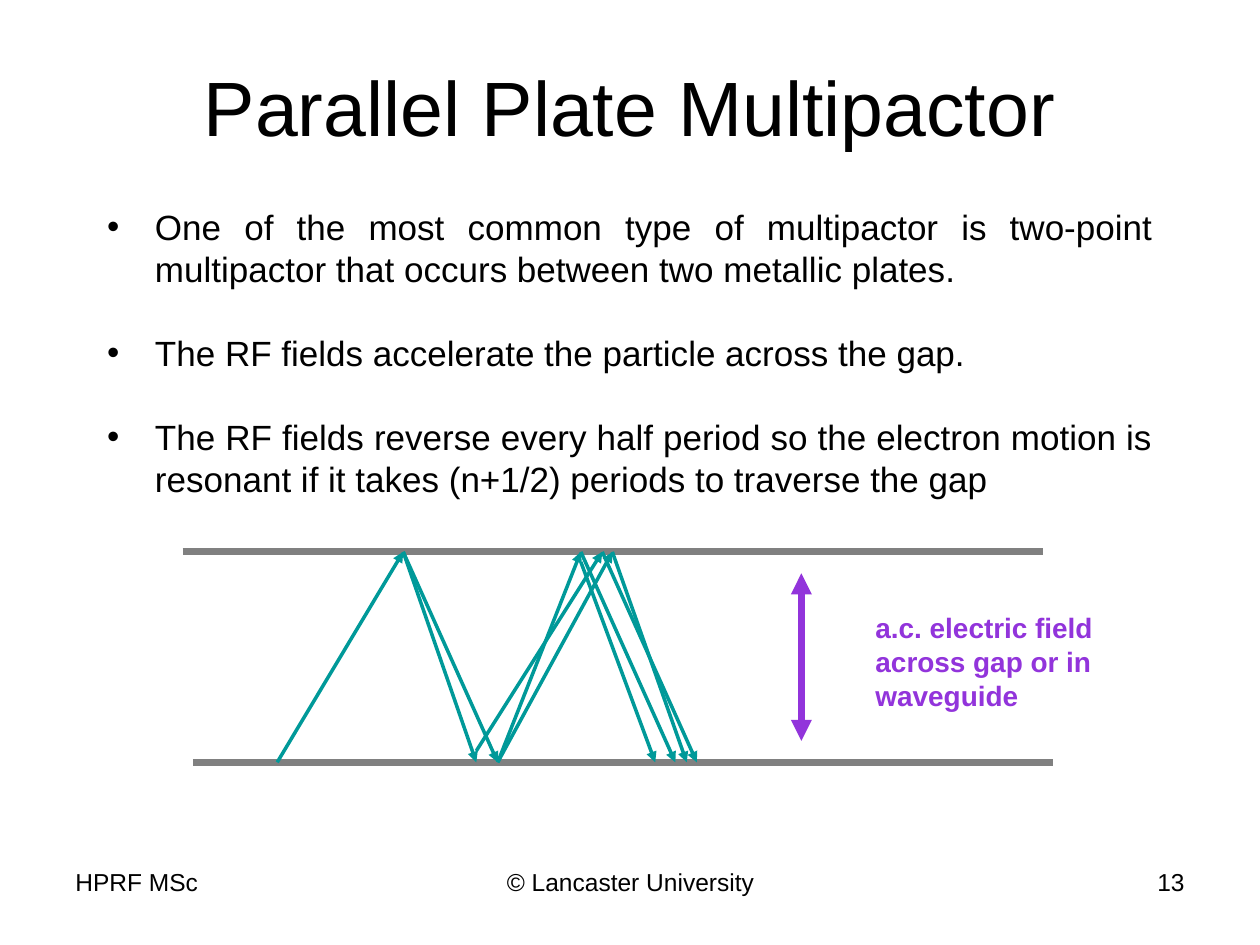
from dataclasses import dataclass

from lxml import etree
from pptx import Presentation
from pptx.dml.color import RGBColor
from pptx.enum import shapes, text
from pptx.oxml import ns
from pptx.util import Inches, Pt


@dataclass(frozen=True)
class Theme:
    font: str = "Arial"
    ink: str = "000000"
    plate: str = "808080"
    electron: str = "009999"
    field: str = "9234DB"
    title_size: int = 44
    body_size: int = 20
    label_size: int = 16
    footer_size: int = 14
    plate_width: int = 4
    electron_width: int = 2


class SlideBuilder:
    def __init__(self, slide, theme):
        self.slide = slide
        self.theme = theme

    def place(self, shape, left, top, width, height):
        shape.left, shape.top = Inches(left), Inches(top)
        shape.width, shape.height = Inches(width), Inches(height)

    def fill_text(self, frame, lines, size, color, align, bold=False):
        for index, line in enumerate(lines):
            paragraph = frame.paragraphs[0] if index == 0 else frame.add_paragraph()
            paragraph.alignment = align
            paragraph.space_before = Pt(0)
            run = paragraph.add_run()
            run.text = line
            run.font.name = self.theme.font
            run.font.size = Pt(size)
            run.font.bold = bold
            run.font.color.rgb = RGBColor.from_string(color)

    def title(self, words, *box):
        heading = self.slide.shapes.title
        self.place(heading, *box)
        frame = heading.text_frame
        frame.auto_size = text.MSO_AUTO_SIZE.NONE
        frame.vertical_anchor = text.MSO_ANCHOR.MIDDLE
        self.fill_text(frame, [words], self.theme.title_size, self.theme.ink,
                       text.PP_ALIGN.CENTER)

    def bullets(self, points, *box):
        body = self.slide.placeholders[1]
        self.place(body, *box)
        frame = body.text_frame
        frame.auto_size = text.MSO_AUTO_SIZE.NONE
        self.fill_text(frame, points, self.theme.body_size, self.theme.ink,
                       text.PP_ALIGN.JUSTIFY)
        for index, paragraph in enumerate(frame.paragraphs):
            properties = paragraph._p.get_or_add_pPr()
            properties.set("marL", str(Inches(0.38)))
            properties.set("indent", str(Inches(-0.38)))
            if index:
                paragraph.space_before = Pt(24)

    def label(self, lines, box, size, color, align=text.PP_ALIGN.LEFT,
              bold=False, wrap=True):
        frame = self.slide.shapes.add_textbox(*map(Inches, box)).text_frame
        frame.word_wrap = wrap
        self.fill_text(frame, lines, size, color, align, bold)

    def line(self, start, end, color, width, arrows=()):
        connector = self.slide.shapes.add_connector(
            shapes.MSO_CONNECTOR.STRAIGHT, *map(Inches, start + end))
        connector.line.color.rgb = RGBColor.from_string(color)
        connector.line.width = Pt(width)
        stroke = connector.line._get_or_add_ln()
        for arrow in arrows:
            etree.SubElement(stroke, ns.qn(f"a:{arrow}"), type="triangle")
        etree.SubElement(connector._element.spPr, ns.qn("a:effectLst"))


def main():
    theme = Theme()
    deck = Presentation()
    deck.slide_width, deck.slide_height = Inches(10), Inches(7.5)
    page = SlideBuilder(deck.slides.add_slide(deck.slide_layouts[1]), theme)

    page.title("Parallel Plate Multipactor", 0.75, 0.5, 8.5, 0.67)
    page.bullets([
        "One of the most common type of multipactor is two-point multipactor "
        "that occurs between two metallic plates.",
        "The RF fields accelerate the particle across the gap.",
        "The RF fields reverse every half period so the electron motion is "
        "resonant if it takes (n+1/2) periods to traverse the gap",
    ], 0.75, 1.58, 8.5, 2.33)

    upper, lower = 4.38, 6.05
    for left, height in ((1.45, upper), (1.53, lower)):
        page.line((left, height), (left + 6.83, height), theme.plate, theme.plate_width)

    electron_paths = [
        ((2.2, lower), (3.2, upper)),
        ((3.2, upper), (3.95, lower)),
        ((3.2, upper), (3.78, lower)),
        ((3.78, 5.96), (4.78, upper)),
        ((3.95, lower), (4.86, upper)),
        ((3.95, lower), (4.61, upper)),
        ((4.61, upper), (5.36, lower)),
        ((4.86, upper), (5.45, lower)),
        ((4.78, upper), (5.53, lower)),
        ((4.61, 4.46), (5.2, lower)),
    ]
    for start, end in electron_paths:
        page.line(start, end, theme.electron, theme.electron_width, ["tailEnd"])

    page.line((6.36, 4.55), (6.36, 5.88), theme.field, theme.plate_width,
              ["headEnd", "tailEnd"])
    page.label(["a.c. electric field", "across gap or in", "waveguide"],
               (6.85, 4.8, 1.93, 0.9), theme.label_size, theme.field,
               bold=True, wrap=False)

    footers = [
        ("HPRF MSc", 0.5, 2.33, text.PP_ALIGN.LEFT),
        ("© Lancaster University", 3.42, 3.17, text.PP_ALIGN.CENTER),
        ("13", 7.17, 2.33, text.PP_ALIGN.RIGHT),
    ]
    for words, left, width, align in footers:
        page.label([words], (left, 6.83, width, 0.52), theme.footer_size,
                   theme.ink, align)

    deck.save("out.pptx")


if __name__ == "__main__":
    main()
